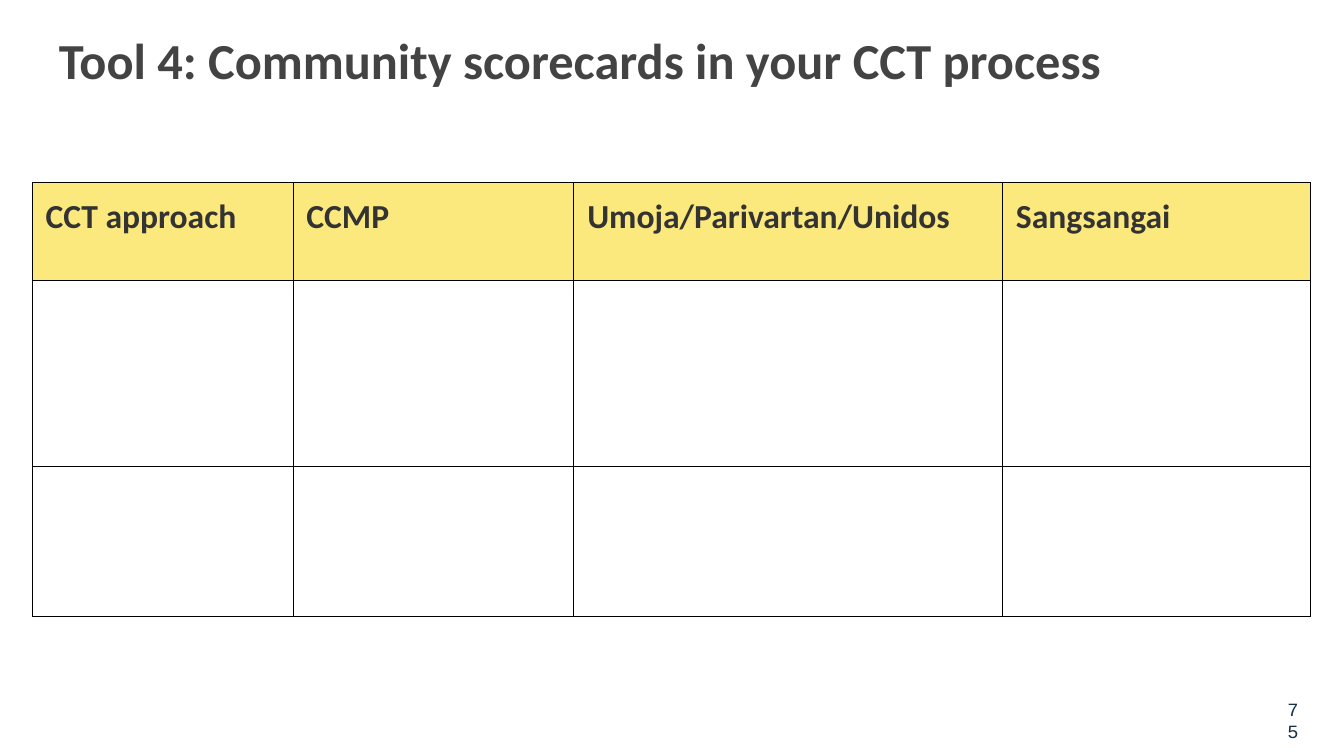
import pptx
import pptx.dml.color
import pptx.enum.text
import pptx.oxml
import pptx.oxml.ns
import pptx.util
from pptx.util import Inches

HEADINGS = ["CCT approach", "CCMP", "Umoja/Parivartan/Unidos", "Sangsangai"]
COLUMN_WIDTHS = [1.94, 2.09, 3.19, 2.29]
ROW_HEIGHTS = [0.73, 1.38, 1.12]


def color(hex_value):
    """Return the colour for a hex string."""
    return pptx.dml.color.RGBColor.from_string(hex_value)


def format_runs(paragraph, font_name, size, hex_value, bold=False):
    """Format every run of a paragraph."""
    for run in paragraph.runs:
        run.font.name = font_name
        run.font.size = pptx.util.Pt(size)
        run.font.bold = bold
        run.font.color.rgb = color(hex_value)


def add_text(slide, text, left, top, width, height):
    """Add a wrapping text box and return its paragraph."""
    shape = slide.shapes.add_textbox(Inches(left), Inches(top), Inches(width), Inches(height))
    text_frame = shape.text_frame
    text_frame.word_wrap = True
    text_frame.margin_left = text_frame.margin_right = Inches(0.1)
    text_frame.margin_top = text_frame.margin_bottom = Inches(0.1)
    text_frame.text = text
    return text_frame.paragraphs[0]


def add_borders(cell, hex_value, width):
    """Draw a solid line on all four sides of a cell."""
    properties = cell._tc.get_or_add_tcPr()
    for position, side in enumerate(["lnL", "lnR", "lnT", "lnB"]):
        line = pptx.oxml.parse_xml(
            f'<a:{side} {pptx.oxml.ns.nsdecls("a")} w="{pptx.util.Pt(width)}">'
            f'<a:solidFill><a:srgbClr val="{hex_value}"/></a:solidFill></a:{side}>'
        )
        properties.insert(position, line)


def format_cell(cell, fill):
    """Set the margins, fill and borders of a cell."""
    cell.margin_left = cell.margin_right = Inches(0.1)
    cell.margin_top = cell.margin_bottom = Inches(0.1)
    cell.fill.solid()
    cell.fill.fore_color.rgb = color(fill)
    add_borders(cell, "000000", 0.5)


def add_approach_table(slide, left, top):
    """Add the table with a heading for each approach and empty rows."""
    frame = slide.shapes.add_table(
        len(ROW_HEIGHTS), len(COLUMN_WIDTHS), Inches(left), Inches(top),
        Inches(sum(COLUMN_WIDTHS)), Inches(sum(ROW_HEIGHTS)),
    )
    table = frame.table
    table.horz_banding = False
    for column, width in zip(table.columns, COLUMN_WIDTHS):
        column.width = Inches(width)
    for row_index, height in enumerate(ROW_HEIGHTS):
        table.rows[row_index].height = Inches(height)
        for cell in table.rows[row_index].cells:
            format_cell(cell, "FFFFFF" if row_index else "FCE97D")
    for cell, heading in zip(table.rows[0].cells, HEADINGS):
        cell.text_frame.text = heading
        format_runs(cell.text_frame.paragraphs[0], "Calibri", 18, "333333", True)


def main():
    """Build the slide and save it."""
    presentation = pptx.Presentation()
    presentation.slide_width = Inches(10)
    presentation.slide_height = Inches(10) * 9 // 16
    slide = presentation.slides.add_slide(presentation.slide_layouts[6])
    page_number = add_text(slide, "75", 9.41, 5.09, 0.35, 0.3)
    page_number.alignment = pptx.enum.text.PP_ALIGN.RIGHT
    format_runs(page_number, "Courier New", 10, "173145")
    title = add_text(slide, "Tool 4: Community scorecards in your CCT process", 0.34, 0.12, 9.6, 0.63)
    format_runs(title, "Calibri", 27, "434343", True)
    add_approach_table(slide, 0.24, 1.36)
    presentation.save("out.pptx")


if __name__ == "__main__":
    main()
